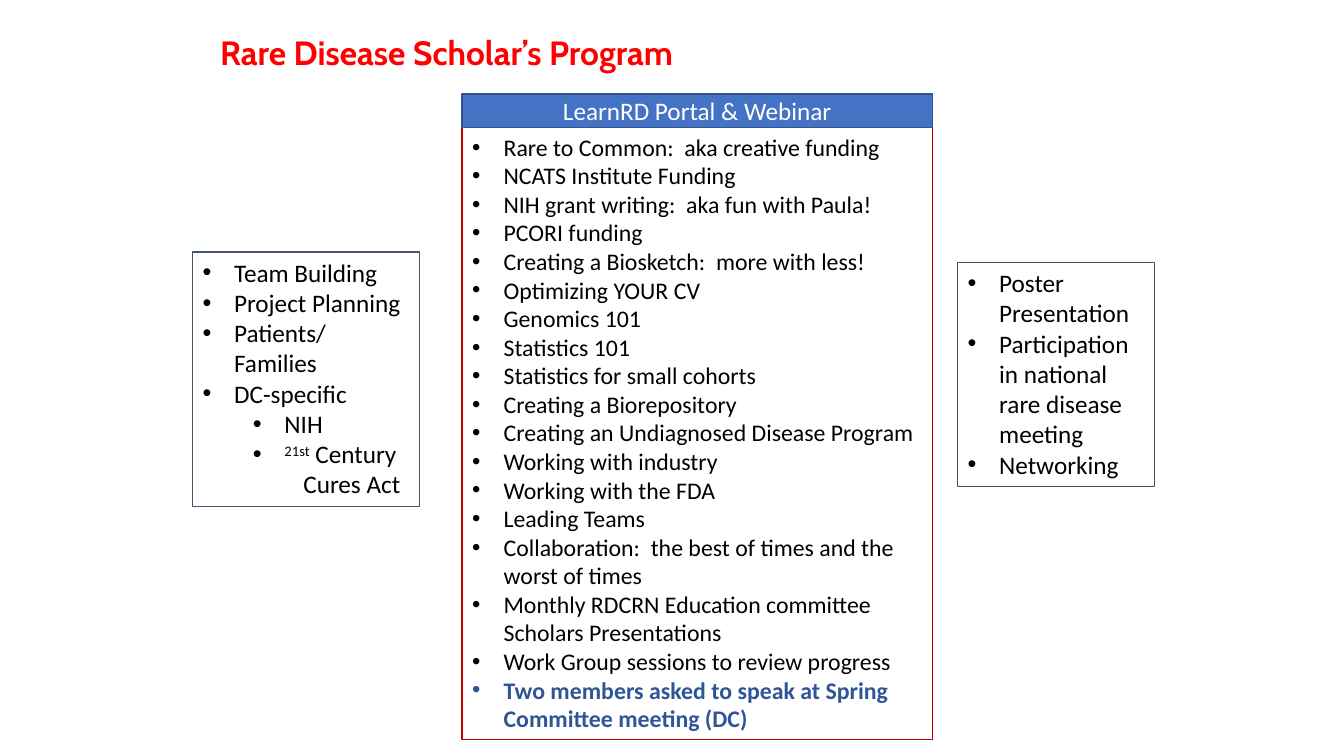
from lxml import etree
from pptx import Presentation
from pptx.dml.color import RGBColor
from pptx.enum.text import MSO_ANCHOR, MSO_AUTO_SIZE, PP_ALIGN
from pptx.oxml.ns import qn
from pptx.util import Pt

LEFT, CENTER = PP_ALIGN.LEFT, PP_ALIGN.CENTER
TOP, MIDDLE = MSO_ANCHOR.TOP, MSO_ANCHOR.MIDDLE
NO_AUTOFIT = MSO_AUTO_SIZE.NONE

RED = RGBColor(0xFF, 0x00, 0x00)
DARK_RED = RGBColor(0xC0, 0x00, 0x00)
SLATE = RGBColor(0x44, 0x54, 0x6A)
BLUE = RGBColor(0x44, 0x72, 0xC4)
BLUE_EDGE = RGBColor(0x32, 0x54, 0x91)
DEEP_BLUE = RGBColor(0x2F, 0x55, 0x97)
BLACK = RGBColor(0x00, 0x00, 0x00)
WHITE = RGBColor(0xFF, 0xFF, 0xFF)

HANGING = 22.5
LEVEL_STEP = 36

TEAM_TOPICS = [
    ("Team Building", 0),
    ("Project Planning", 0),
    ("Patients/ Families", 0),
    ("DC-specific", 0),
    ("NIH", 1),
]
MEETING_TOPICS = [
    "Poster Presentation",
    "Participation in national rare disease meeting",
    "Networking",
]
PORTAL_TOPICS = [
    "Rare to Common:  aka creative funding",
    "NCATS Institute Funding",
    "NIH grant writing:  aka fun with Paula!",
    "PCORI funding",
    "Creating a Biosketch:  more with less!",
    "Optimizing YOUR CV",
    "Genomics 101",
    "Statistics 101",
    "Statistics for small cohorts",
    "Creating a Biorepository",
    "Creating an Undiagnosed Disease Program",
    "Working with industry",
    "Working with the FDA",
    "Leading Teams",
    "Collaboration:  the best of times and the worst of times",
    "Monthly RDCRN Education committee Scholars Presentations",
    "Work Group sessions to review progress",
]


def place(holder, box, anchor=TOP):
    holder.left, holder.top, holder.width, holder.height = map(Pt, box)
    frame = holder.text_frame
    frame.word_wrap = True
    frame.auto_size = NO_AUTOFIT
    frame.vertical_anchor = anchor
    return frame


def outline(holder, color, width=0.75):
    holder.line.color.rgb = color
    holder.line.width = Pt(width)


def add_run(paragraph, text, size, color=BLACK, bold=False, font="Calibri"):
    run = paragraph.add_run()
    run.text = text
    run.font.size = Pt(size)
    run.font.name = font
    run.font.bold = bold
    run.font.color.rgb = color
    return run


def add_bullet(frame, level=0):
    first = frame.paragraphs[0]
    paragraph = frame.add_paragraph() if first.runs else first
    properties = paragraph._p.get_or_add_pPr()
    properties.set("marL", str(Pt(HANGING + LEVEL_STEP * level)))
    properties.set("indent", str(-Pt(HANGING)))
    etree.SubElement(properties, qn("a:buFont"), typeface="Arial")
    etree.SubElement(properties, qn("a:buChar"), char="•")
    paragraph.level = level
    paragraph.alignment = LEFT
    paragraph.space_before = Pt(0)
    return paragraph


def build_title(holder, box):
    heading = place(holder, box).paragraphs[0]
    heading.alignment = LEFT
    heading.line_spacing = 0.9
    add_run(heading, "Rare Disease Scholar’s Program", 24, RED, True, "Cabin")


def build_team(holder, box):
    frame = place(holder, box)
    outline(holder, SLATE)
    for topic, level in TEAM_TOPICS:
        add_run(add_bullet(frame, level), topic, 18)
    cures_act = add_bullet(frame, 1)
    ordinal = add_run(cures_act, "21st", 18)
    ordinal.font._element.set("baseline", "30000")
    add_run(cures_act, " Century", 18)
    cures_act.add_line_break()
    add_run(cures_act, "\tCures Act", 18)


def build_meeting(holder, box):
    frame = place(holder, box)
    outline(holder, SLATE)
    for topic in MEETING_TOPICS:
        add_run(add_bullet(frame), topic, 18)


def build_portal(topics_holder, header_holder, box):
    left, top, width, height = box
    header_height = 24
    topics = place(topics_holder, (left, top + header_height, width, height - header_height))
    outline(topics_holder, DARK_RED)
    for topic in PORTAL_TOPICS:
        add_run(add_bullet(topics), topic, 17)
    add_run(add_bullet(topics), "Two members asked to speak at Spring Committee meeting (DC)",
            17, DEEP_BLUE, True)

    header = place(header_holder, (left, top, width, header_height), MIDDLE).paragraphs[0]
    header_holder.fill.solid()
    header_holder.fill.fore_color.rgb = BLUE
    outline(header_holder, BLUE_EDGE, 1)
    header.alignment = CENTER
    header.space_before = Pt(0)
    add_run(header, "LearnRD Portal & Webinar", 18, WHITE)


def main():
    deck = Presentation()
    deck.slide_width, deck.slide_height = Pt(960), Pt(540)
    slide = deck.slides.add_slide(deck.slide_layouts[4])
    title, portal, team, header, meeting = slide.placeholders
    build_title(title, (150, 22.5, 648, 90))
    build_team(team, (137.5, 180, 162, 181.5))
    build_meeting(meeting, (684, 187.5, 140.5, 160))
    build_portal(portal, header, (330, 67, 336, 461.5))
    deck.save("out.pptx")


if __name__ == "__main__":
    main()
